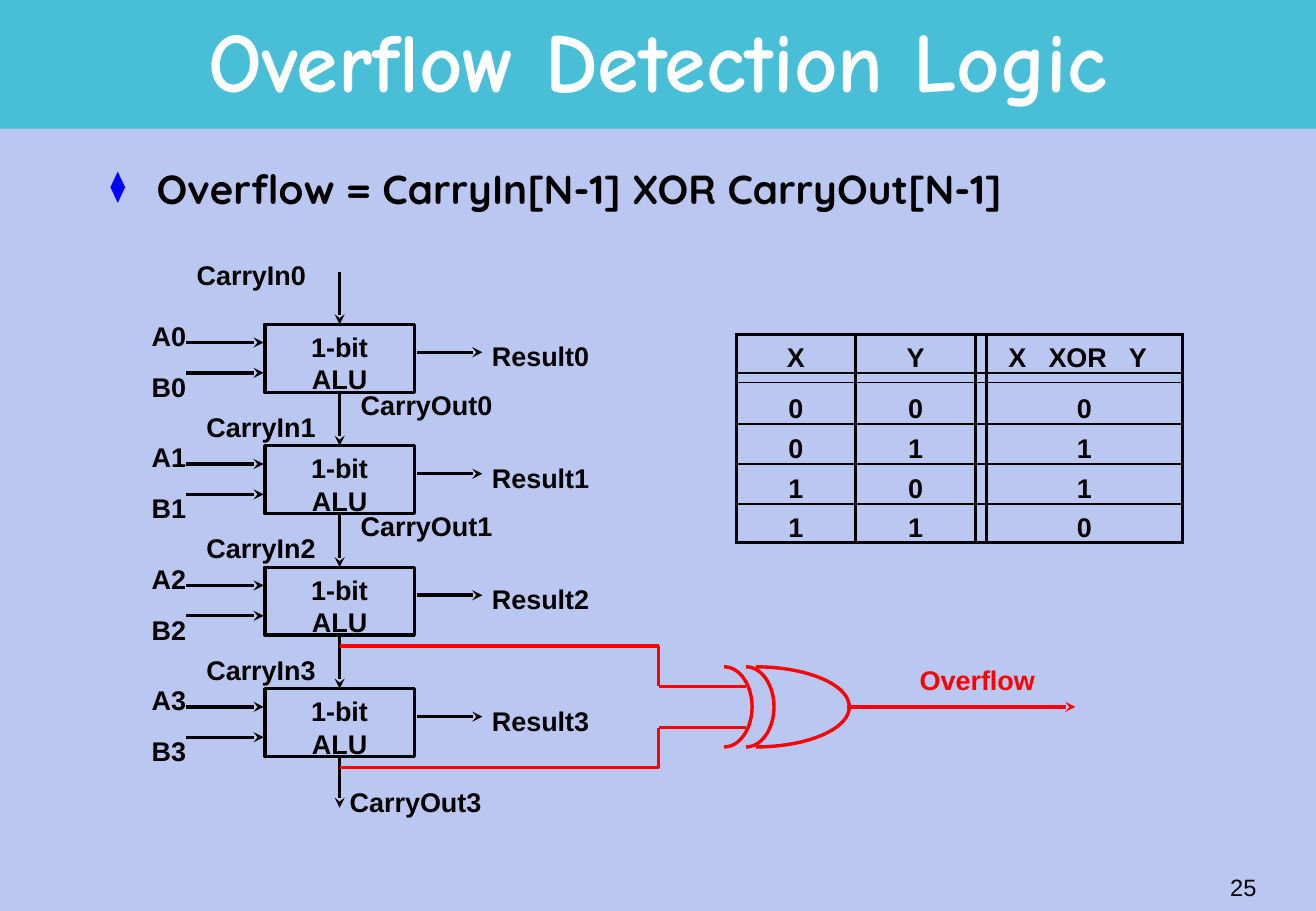
import math
import pptx
import pptx.util
import pptx.dml.color
import pptx.enum.shapes
import pptx.enum.text
import pptx.oxml.ns
from lxml import etree

W, H = 10.83, 7.5
COLORS = {"bg": "BAC8F1", "band": "49BFD7", "black": "000000", "red": "FF0000",
          "white": "FFFFFF", "bullet": "0000FF"}
TITLE = "Overflow Detection Logic"
BODY = "Overflow = CarryIn[N-1] XOR CarryOut[N-1]"
NUMBER = "25"
STAGES = 4
ALU_X, ALU_Y, ALU_W, ALU_H, PITCH = 2.18, 2.67, 1.23, 0.56, 1
STAGE_LABELS = [("A", 1.15, -0.09, 0.52), ("B", 1.15, 0.33, 0.52), ("Result", 3.95, 0.08, 1.09)]
STAGE_ARROWS = [(1.53, 2.17, 0.15), (1.53, 2.17, 0.4), (3.43, 3.97, 0.23)]
CARRY_LABELS = [("CarryIn0", 1.52, 2.08, 1.19), ("CarryIn1", 1.6, 3.33, 1.19),
                ("CarryIn2", 1.6, 4.33, 1.19), ("CarryIn3", 1.6, 5.33, 1.19),
                ("CarryOut0", 2.87, 3.15, 1.4), ("CarryOut1", 2.87, 4.15, 1.4),
                ("CarryOut3", 2.78, 6.42, 1.4)]
CARRY_X = ALU_X + ALU_W / 2
GATE_Y, GATE_RY = 5.82, 0.33
GATE_ARCS = [(6.22, 0.77), (6.14, 0.23), (5.96, 0.23)]
WIRES = [[(CARRY_X, 5.32), (5.42, 5.32), (5.42, 5.65), (6.14, 5.65)],
         [(CARRY_X, 6.32), (5.42, 6.32), (5.42, 5.99), (6.14, 5.99)]]
TABLE_X, TABLE_Y = 6.06, 2.75
COLUMNS = [0.98, 0.99, 0.09, 1.61]
ROWS = [0.32, 0.08, 0.34, 0.33, 0.33, 0.32]
TRUTH = [("X", "Y", "", "X\tXOR\tY"), ("", "", "", ""), ("0", "0", "", "0"),
         ("0", "1", "", "1"), ("1", "0", "", "1"), ("1", "1", "", "0")]
HEADER_TABS = [0.33, 0.99]

Inches, Pt = pptx.util.Inches, pptx.util.Pt
ALIGN = pptx.enum.text.PP_ALIGN
ANCHOR = pptx.enum.text.MSO_ANCHOR
SHAPE = pptx.enum.shapes.MSO_SHAPE
qn = pptx.oxml.ns.qn


def rgb(name):
    return pptx.dml.color.RGBColor.from_string(COLORS[name])


def style(p, size=16, font="Arial", color="black", bold=True, align=ALIGN.LEFT):
    p.alignment = align
    for r in p.runs:
        r.font.size, r.font.name, r.font.bold = Pt(size), font, bold
        r.font.color.rgb = rgb(color)


def text(s, value, x, y, w, h=0.37, wrap=False, anchor=ANCHOR.TOP, **look):
    tf = s.shapes.add_textbox(Inches(x), Inches(y), Inches(w), Inches(h)).text_frame
    tf.word_wrap, tf.vertical_anchor = wrap, anchor
    tf.text = value
    style(tf.paragraphs[0], **look)
    return tf.paragraphs[0]


def line(s, start, end, color="black", arrow=False):
    c = s.shapes.add_connector(pptx.enum.shapes.MSO_CONNECTOR.STRAIGHT,
                               *[Inches(v) for v in (*start, *end)])
    c.line.color.rgb, c.line.width = rgb(color), Pt(2)
    if arrow:
        etree.SubElement(c.line._get_or_add_ln(), qn("a:tailEnd"), type="stealth")
    etree.SubElement(c._element.spPr, qn("a:effectLst"))
    return c


def box(s, x, y, w, h):
    sp = s.shapes.add_shape(SHAPE.RECTANGLE, Inches(x), Inches(y), Inches(w), Inches(h))
    sp.shadow.inherit = False
    return sp


def draw_heading(s):
    band = box(s, 0, 0, W, 1.06)
    band.fill.solid()
    band.fill.fore_color.rgb = rgb("band")
    band.line.fill.background()
    p = text(s, TITLE, 0.81, 0.05, 9.21, 0.99, True, ANCHOR.MIDDLE, size=50,
             font="Comic Neue", color="white", align=ALIGN.CENTER)
    p.line_spacing = 0.85
    p = text(s, BODY, 0.81, 1.35, 9.21, 0.5, True, size=24, font="Quicksand")
    p.line_spacing = 0.9
    pPr = p._p.get_or_add_pPr()
    pPr.set("marL", str(Inches(0.38)))
    pPr.set("indent", str(-Inches(0.38)))
    clr = etree.SubElement(pPr, qn("a:buClr"))
    etree.SubElement(clr, qn("a:srgbClr"), val=COLORS["bullet"])
    etree.SubElement(pPr, qn("a:buSzPct"), val="75000")
    etree.SubElement(pPr, qn("a:buChar"), char="⧫")
    text(s, NUMBER, 8.18, 7.05, 2.26, 0.5, anchor=ANCHOR.MIDDLE, size=14,
         bold=False, align=ALIGN.RIGHT)


def draw_adder(s):
    alus = []
    for i in range(STAGES):
        top = ALU_Y + i * PITCH
        alu = box(s, ALU_X, top, ALU_W, ALU_H)
        alu.fill.background()
        alu.line.color.rgb, alu.line.width = rgb("black"), Pt(2)
        tf = alu.text_frame
        tf.word_wrap, tf.vertical_anchor, tf.margin_bottom = False, ANCHOR.TOP, 0
        tf.text = "1-bit\nALU"
        for p in tf.paragraphs:
            style(p, align=ALIGN.CENTER)
        alus.append(alu)
        for name, x, dy, w in STAGE_LABELS:
            text(s, f"{name}{i}", x, top + dy, w)
        for x1, x2, dy in STAGE_ARROWS:
            line(s, (x1, top + dy), (x2, top + dy), arrow=True)
    for i in range(STAGES + 1):
        y = ALU_Y + i * PITCH - 0.43
        carry = line(s, (CARRY_X, y), (CARRY_X, y + 0.41), arrow=True)
        if i > 0:
            carry.begin_connect(alus[i - 1], 2)
        if i < STAGES:
            carry.end_connect(alus[i], 0)
    for name, x, y, w in CARRY_LABELS:
        text(s, name, x, y, w)


def draw_gate(s):
    for wire in WIRES:
        for start, end in zip(wire, wire[1:]):
            line(s, start, end, "red")
    for cx, rx in GATE_ARCS:
        angles = [math.radians(a) for a in range(-90, 91, 5)]
        pts = [(Inches(cx + rx * math.cos(a)), Inches(GATE_Y + GATE_RY * math.sin(a)))
               for a in angles]
        fb = s.shapes.build_freeform(*pts[0])
        fb.add_line_segments(pts[1:], close=False)
        arc = fb.convert_to_shape()
        arc.shadow.inherit = False
        arc.fill.background()
        arc.line.color.rgb, arc.line.width = rgb("red"), Pt(2)
    line(s, (6.97, GATE_Y), (8.85, GATE_Y), "red", True)
    text(s, "Overflow", 7.47, 5.41, 1.15, color="red")


def border(cell, side, width):
    ln = etree.SubElement(cell._tc.get_or_add_tcPr(), qn(f"a:ln{side}"), w=str(Pt(width)))
    fill = etree.SubElement(ln, qn("a:solidFill"))
    etree.SubElement(fill, qn("a:srgbClr"), val=COLORS["black"])


def draw_truth_table(s):
    frame = s.shapes.add_table(len(ROWS), len(COLUMNS), Inches(TABLE_X), Inches(TABLE_Y),
                               Inches(sum(COLUMNS)), Inches(sum(ROWS)))
    table = frame.table
    table.first_row = table.horz_banding = False
    for column, w in zip(table.columns, COLUMNS):
        column.width = Inches(w)
    for i, h in enumerate(ROWS):
        table.rows[i].height = Inches(h)
        for j, value in enumerate(TRUTH[i]):
            cell = table.cell(i, j)
            cell.margin_left = cell.margin_right = cell.margin_top = cell.margin_bottom = 0
            cell.vertical_anchor = ANCHOR.BOTTOM
            for side, width in (("L", 2), ("R", 2), ("T", 1 if i else 2),
                                ("B", 1 if i < len(ROWS) - 1 else 2)):
                border(cell, side, width)
            cell.fill.background()
            p = cell.text_frame.paragraphs[0]
            p.text = value
            if "\t" in value:
                cell.margin_left = Inches(0.18)
                tabs = etree.SubElement(p._p.get_or_add_pPr(), qn("a:tabLst"))
                for pos in HEADER_TABS:
                    etree.SubElement(tabs, qn("a:tab"), pos=str(Inches(pos)), algn="l")
            style(p, align=ALIGN.LEFT if "\t" in value else ALIGN.CENTER)
            if not value:
                etree.SubElement(p._p, qn("a:endParaRPr"), sz="400")


def main():
    prs = pptx.Presentation()
    prs.slide_width, prs.slide_height = Inches(W), Inches(H)
    s = prs.slides.add_slide(prs.slide_layouts[6])
    s.background.fill.solid()
    s.background.fill.fore_color.rgb = rgb("bg")
    draw_heading(s)
    draw_adder(s)
    draw_gate(s)
    draw_truth_table(s)
    prs.save("out.pptx")


if __name__ == "__main__":
    main()
